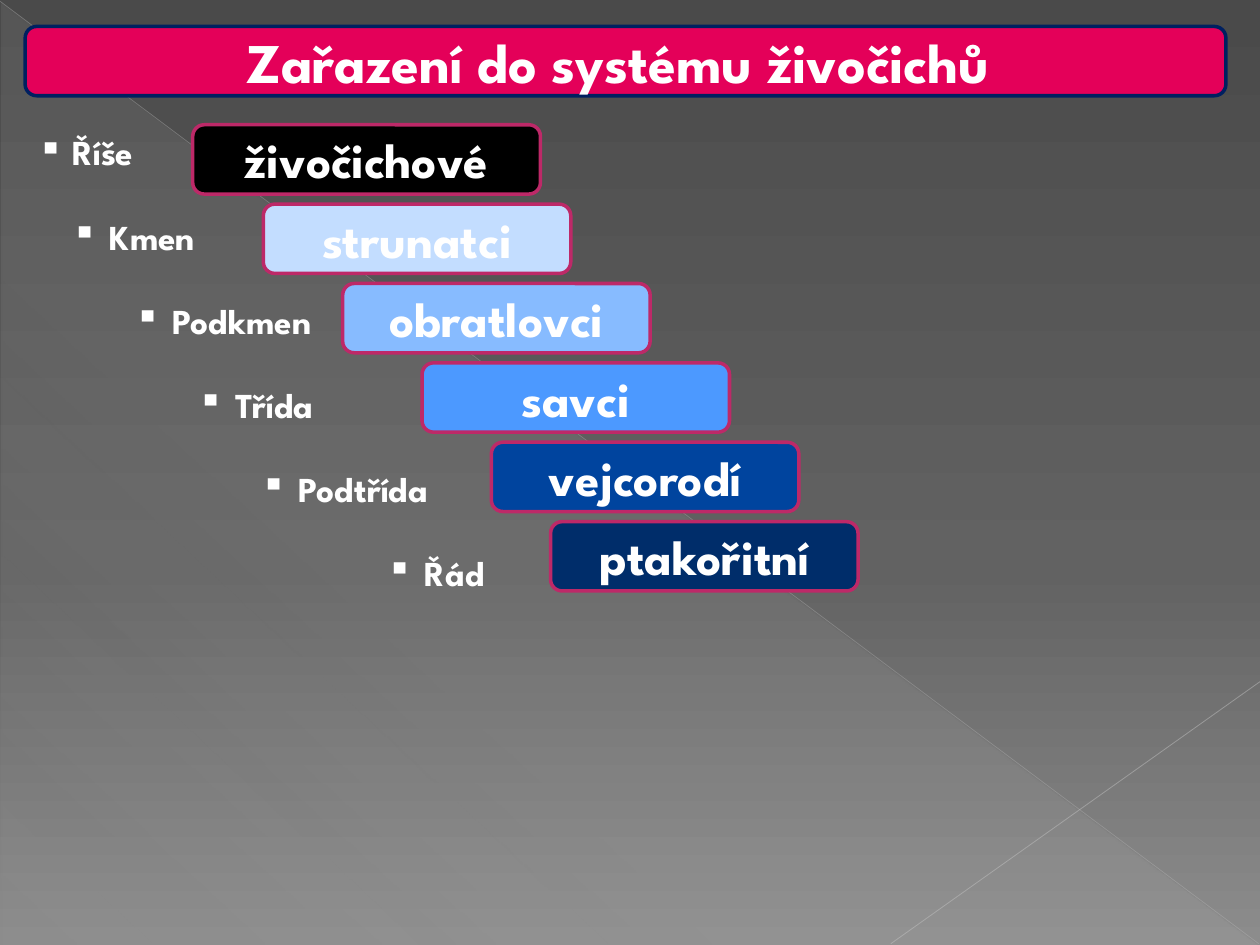
from lxml import etree
from pptx import Presentation
from pptx.dml.color import RGBColor
from pptx.enum.shapes import MSO_CONNECTOR, MSO_SHAPE
from pptx.enum.text import MSO_ANCHOR, PP_ALIGN
from pptx.oxml.ns import qn
from pptx.util import Inches, Pt

ROUND, CORNER = MSO_SHAPE.ROUNDED_RECTANGLE, MSO_SHAPE.RIGHT_TRIANGLE
LINE = MSO_CONNECTOR.STRAIGHT
MIDDLE = MSO_ANCHOR.MIDDLE
LEFT, CENTER = PP_ALIGN.LEFT, PP_ALIGN.CENTER

FONT = "League Spartan"
HEX = {
    "white": "FFFFFF", "pink": "E40059", "navy": "002060", "rose": "BD2968",
    "dark": "4A4A4A", "mid": "626262", "light": "8C8C8C", "veil": "D2D2D2",
    "long": "BFBFBF", "short": "C6C6C6",
    "realm": "000000", "phylum": "C3DDFF", "branch": "87BBFF",
    "class": "4C99FF", "group": "00449E", "order": "002D6A",
}
RANKS = [
    ("Říše", 0, "živočichové", 1.53, 2.76, "realm"),
    ("Kmen", 1, "strunatci", 2.09, 2.44, "phylum"),
    ("Podkmen", 2, "obratlovci", 2.72, 2.44, "branch"),
    ("Třída", 3, "savci", 3.35, 2.44, "class"),
    ("Podtřída", 4, "vejcorodí", 3.9, 2.44, "group"),
    ("Řád", 6, "ptakořitní", 4.37, 2.44, "order"),
]
TOP, STEP, HIGH = 0.99, 0.63, 0.55


def rgb(name):
    """Return the named colour."""
    return RGBColor.from_string(HEX[name])


def write(para, text, size=20, color="white", align=LEFT, before=0):
    """Put formatted text into a paragraph."""
    para.alignment = align
    para.space_before = Pt(before)
    run = para.add_run()
    run.text = text
    font = run.font
    font.name, font.size, font.bold = FONT, Pt(size), True
    font.color.rgb = rgb(color)


def fade(color, alpha):
    """Give a colour element an opacity in percent."""
    etree.SubElement(color, qn("a:alpha"), val=str(alpha * 1000))


def blend(solid, stops, angle):
    """Replace a solid fill by a linear gradient."""
    grad = etree.Element(qn("a:gradFill"), rotWithShape="1")
    row = etree.SubElement(grad, qn("a:gsLst"))
    for pos, name, alpha in stops:
        stop = etree.SubElement(row, qn("a:gs"), pos=str(pos * 1000))
        fade(etree.SubElement(stop, qn("a:srgbClr"), val=HEX[name]), alpha)
    etree.SubElement(grad, qn("a:lin"), ang=str(angle * 60000), scaled="0")
    solid.getparent().replace(solid, grad)


class Deck:
    """Hold the style and the current slide."""

    def __init__(self):
        """Open a deck with one blank slide."""
        self.file = Presentation()
        self.file.slide_width, self.file.slide_height = Inches(10), Inches(7.5)
        self.slide = self.file.slides.add_slide(self.file.slide_layouts[6])
        self.shapes = self.slide.shapes

    def back(self, stops, angle):
        """Fill the background with a gradient."""
        self.slide.background.fill.solid()
        blend(next(self.slide.element.iter(qn("a:solidFill"))), stops, angle)

    def shape(self, kind, box, fill):
        """Add a plain filled shape."""
        shape = self.shapes.add_shape(kind, *map(Inches, box))
        shape.shadow.inherit = False
        shape.fill.solid()
        shape.fill.fore_color.rgb = rgb(fill)
        shape.line.fill.background()
        return shape

    def veil(self, box, stops, angle):
        """Add a translucent triangle."""
        shape = self.shape(CORNER, box, "veil")
        blend(shape.element.spPr.find(qn("a:solidFill")), stops, angle)

    def ray(self, start, end, color, width, alpha):
        """Add a translucent line."""
        line = self.shapes.add_connector(LINE, *map(Inches, start + end))
        line.line.color.rgb = rgb(color)
        line.line.width = Pt(width)
        props = line.element.spPr
        fade(next(props.iter(qn("a:srgbClr"))), alpha)
        etree.SubElement(props, qn("a:effectLst"))

    def plate(self, box, text, fill, edge, size):
        """Add a rounded box with centred text."""
        shape = self.shape(ROUND, box, fill)
        shape.line.color.rgb = rgb(edge)
        shape.line.width = Pt(2)
        frame = shape.text_frame
        frame.word_wrap, frame.vertical_anchor = True, MIDDLE
        write(frame.paragraphs[0], text, size=size, align=CENTER)

    def steps(self, box, items):
        """Add a bulleted list that steps to the right."""
        frame = self.shapes.add_textbox(*map(Inches, box)).text_frame
        frame.word_wrap = True
        for i, (text, level) in enumerate(items):
            para = frame.add_paragraph() if i else frame.paragraphs[0]
            write(para, f" {text}", before=24 if i else 0)
            para.level = level
            props = para._p.get_or_add_pPr()
            props.set("marL", str(Inches(level / 2)))
            props.set("indent", str(Inches(-0.23 if level else 0)))
            etree.SubElement(props, qn("a:buChar"), char="▪")


def main():
    """Build the slide and save it."""
    deck = Deck()
    deck.back([(0, "dark", 100), (60, "mid", 100), (100, "light", 100)], 90)
    deck.veil((0.01, 0.02, 9.98, 7.48),
              [(0, "veil", 10), (70, "veil", 8), (100, "veil", 1)], 133)
    deck.ray((0, 0.01), (9.99, 7.49), "long", 0.39, 35)
    deck.ray((10, 5.41), (7.07, 7.49), "short", 0.47, 45)
    deck.plate((0.2, 0.21, 9.53, HIGH), "Zařazení do systému živočichů ",
               "pink", "navy", 32)
    deck.steps((0.2, TOP, 8.15, 4.48), [rank[:2] for rank in RANKS])
    for i, (_, _, text, left, width, fill) in enumerate(RANKS):
        deck.plate((left, TOP + i * STEP, width, HIGH), text, fill, "rose", 28)
    deck.file.save("out.pptx")


if __name__ == "__main__":
    main()
